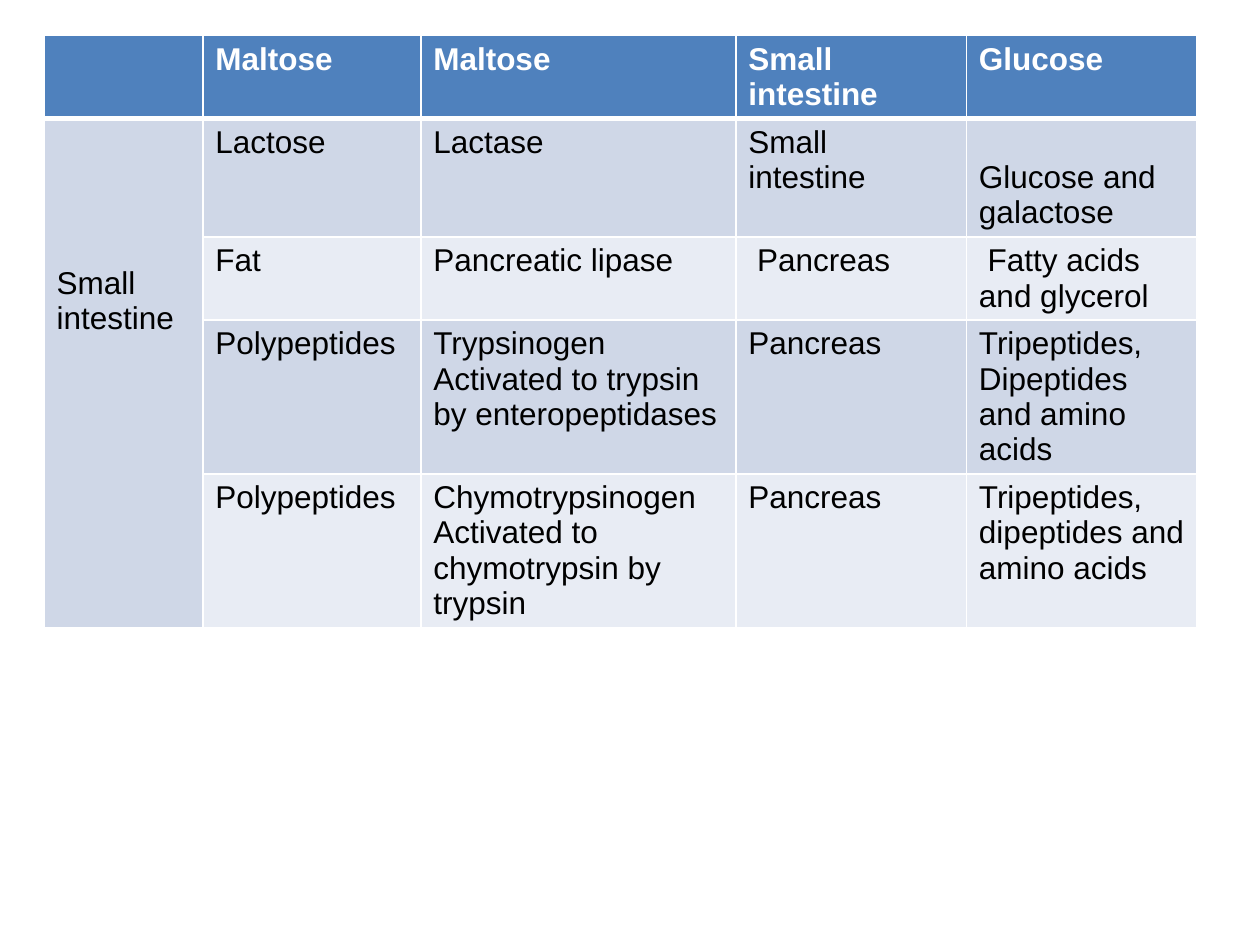
from lxml import etree
from pptx import Presentation
from pptx.dml.color import RGBColor
from pptx.oxml.ns import qn
from pptx.util import Inches, Pt

WHITE = RGBColor(0xFF, 0xFF, 0xFF)
BLACK = RGBColor(0, 0, 0)
HEADER = RGBColor(0x4F, 0x81, 0xBD)
BANDS = (RGBColor(0xE8, 0xEC, 0xF4), RGBColor(0xCF, 0xD7, 0xE7))

COLUMNS = [1.26, 1.73, 2.5, 1.83, 1.83]
HEIGHTS = [0.66, 0.94, 0.66, 1.22, 1.22]
LINE = 0.28
ROWS = [
    ["", "Maltose", "Maltose", "Small\nintestine", "Glucose"],
    ["Small intestine", "Lactose", "Lactase", "Small\nintestine",
     "Glucose and\ngalactose"],
    ["", "Fat", "Pancreatic lipase", " Pancreas",
     " Fatty acids\nand glycerol"],
    ["", "Polypeptides",
     "Trypsinogen\nActivated to trypsin by enteropeptidases",
     "Pancreas", "Tripeptides,\nDipeptides\nand amino\nacids"],
    ["", "Polypeptides",
     "Chymotrypsinogen\nActivated to\nchymotrypsin by\ntrypsin",
     "Pancreas", "Tripeptides,\ndipeptides and\namino acids"],
]


class SlideBuilder:
    font = "Arial"
    size = Pt(18)

    def __init__(self, slide):
        self.slide = slide

    def border(self, cell, side, width):
        tcPr = cell._tc.get_or_add_tcPr()
        ln = etree.SubElement(tcPr, qn(f"a:ln{side}"), w=str(Pt(width)))
        fill = etree.SubElement(ln, qn("a:solidFill"))
        etree.SubElement(fill, qn("a:srgbClr"), val=str(WHITE))

    def cell(self, cell, text, row):
        header = row == 0
        widths = {"L": 1, "R": 1, "T": 3 if row == 1 else 1,
                  "B": 3 if header else 1}
        for side, width in widths.items():
            self.border(cell, side, width)
        cell.fill.solid()
        cell.fill.fore_color.rgb = HEADER if header else BANDS[row % 2]
        cell.margin_left = cell.margin_right = Inches(0.1)
        cell.margin_top = cell.margin_bottom = Inches(0.05)
        cell.text = text
        for p in cell.text_frame.paragraphs:
            p.font.name = self.font
            p.font.size = self.size
            p.font.bold = header
            p.font.color.rgb = WHITE if header else BLACK

    def table(self, left, top, columns, heights, rows):
        table = self.slide.shapes.add_table(
            len(rows), len(columns), Inches(left), Inches(top),
            Inches(sum(columns)), Inches(sum(heights))).table
        for column, width in zip(table.columns, columns):
            column.width = Inches(width)
        for i, (height, texts) in enumerate(zip(heights, rows)):
            table.rows[i].height = Inches(height)
            for j, text in enumerate(texts):
                self.cell(table.cell(i, j), text, i)
        return table


def main():
    prs = Presentation()
    prs.slide_width, prs.slide_height = Inches(10), Inches(7.5)
    s = SlideBuilder(prs.slides.add_slide(prs.slide_layouts[6]))
    table = s.table(0.35, 0.28, COLUMNS, HEIGHTS, ROWS)
    organ = table.cell(1, 0)
    organ.merge(table.cell(4, 0))
    organ.margin_top = Inches(0.05 + 4 * LINE)
    table.cell(1, 4).margin_top = Inches(0.05 + LINE)
    prs.save("out.pptx")


if __name__ == "__main__":
    main()
